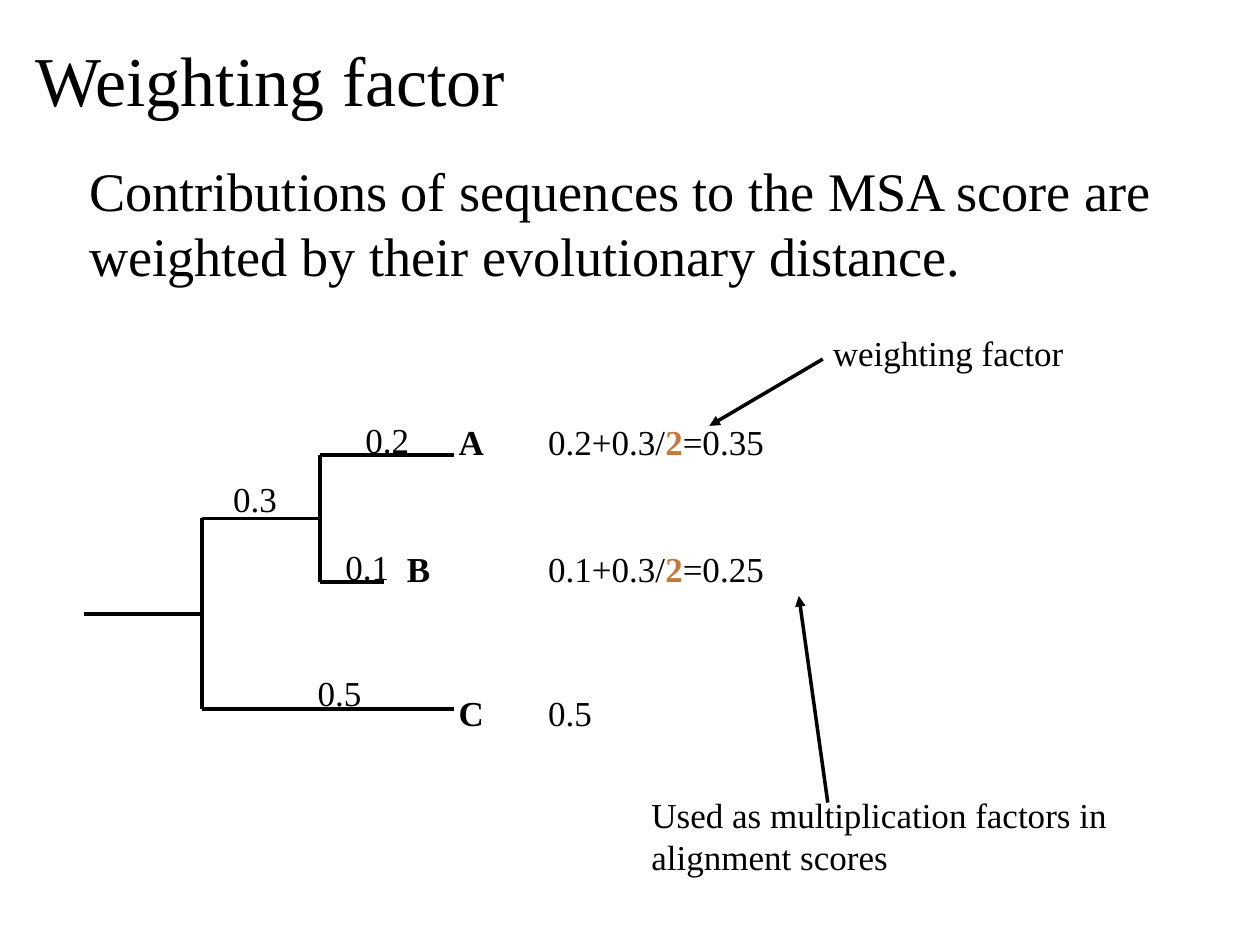
from lxml import etree
from pptx import Presentation
from pptx.dml.color import RGBColor
from pptx.enum import shapes, text
from pptx.oxml import ns
from pptx.util import Inches, Pt

COLORS = {"ink": "000000", "accent": "C67838"}
FONT = "Times New Roman"

# Content: words first, then the tree they belong to
TITLE = "Weighting factor"
STATEMENT = ("Contributions of sequences to the MSA score are "
             "weighted by their evolutionary distance.")
NOTES = [  # words, left, top, width, height
    ("weighting factor", 6.56, 2.58, 2.42, 0.44),
    ("Used as multiplication factors in alignment scores", 5.12, 6.25, 4.03, 0.77),
]
LEAVES = [  # name, left, top, weight formula (*...* is highlighted), formula width
    ("A", 3.59, 3.29, "0.2+0.3/*2*=0.35", 2.4),
    ("B", 3.18, 4.3, "0.1+0.3/*2*=0.25", 2.4),
    ("C", 3.59, 5.44, "0.5", 0.63),
]
LENGTHS = [("0.2", 2.85, 3.27), ("0.1", 2.69, 4.28),
           ("0.5", 2.47, 5.28), ("0.3", 1.8, 3.74)]
ARROWS = [((6.53, 2.85), (5.63, 3.38)), ((6.57, 6.37), (6.34, 4.73))]

# Tree levels
ROOT_X, OUTER_X, INNER_X, TIP_X, B_TIP_X = 0.67, 1.6, 2.54, 3.6, 3.05
A_Y, B_Y, C_Y = 3.61, 4.62, 5.63
INNER_Y = (A_Y + B_Y) / 2
ROOT_Y = (INNER_Y + C_Y) / 2
BRANCHES = [
    ((ROOT_X, ROOT_Y), (OUTER_X, ROOT_Y)),
    ((OUTER_X, INNER_Y), (OUTER_X, C_Y)),
    ((OUTER_X, INNER_Y), (INNER_X, INNER_Y)),
    ((OUTER_X, C_Y), (TIP_X, C_Y)),
    ((INNER_X, A_Y), (TIP_X, A_Y)),
    ((INNER_X, B_Y), (B_TIP_X, B_Y)),
    ((INNER_X, A_Y), (INNER_X, B_Y)),
]
ROW_HEIGHT = 0.44
FORMULA_X = 4.3


def add_text(page, words, left, top, width, height=ROW_HEIGHT, *,
             size=20, bold=False, inset=0.05, wrap=True):
    box = page.shapes.add_textbox(*map(Inches, (left, top, width, height)))
    frame = box.text_frame
    frame.word_wrap = wrap
    frame.auto_size = text.MSO_AUTO_SIZE.SHAPE_TO_FIT_TEXT
    frame.margin_left = frame.margin_right = Inches(inset)
    frame.margin_top = frame.margin_bottom = Inches(inset)
    para = frame.paragraphs[0]
    for index, part in enumerate(words.split("*")):
        marked = index % 2 == 1
        span = para.add_run()
        span.text = part
        span.font.name = FONT
        span.font.size = Pt(size)
        span.font.bold = bold or marked
        color = COLORS["accent" if marked else "ink"]
        span.font.color.rgb = RGBColor.from_string(color)


def add_line(page, start, end, width=2.25, arrow=False):
    line = page.shapes.add_connector(
        shapes.MSO_CONNECTOR.STRAIGHT, *map(Inches, start + end))
    line.line.color.rgb = RGBColor.from_string(COLORS["ink"])
    line.line.width = Pt(width)
    properties = line._element.spPr
    etree.SubElement(properties, ns.qn("a:effectLst"))
    if arrow:
        outline = properties.find(ns.qn("a:ln"))
        etree.SubElement(outline, ns.qn("a:tailEnd"), type="triangle")


def main():
    deck = Presentation()
    deck.slide_width, deck.slide_height = Inches(10), Inches(7.5)
    page = deck.slides.add_slide(deck.slide_layouts[6])

    # Heading and statement
    add_text(page, TITLE, 0.23, 0.24, 3.87, 0.77, size=40, wrap=False)
    add_text(page, STATEMENT, 0.68, 1.22, 8.59, 1.11, size=31, inset=0.03)

    # Tree with branch lengths
    for start, end in BRANCHES:
        add_line(page, start, end)
    for length, left, top in LENGTHS:
        add_text(page, length, left, top, 0.49)

    # Leaves and their weights
    for name, left, top, formula, width in LEAVES:
        add_text(page, name, left, top, 0.54, bold=True)
        add_text(page, formula, FORMULA_X, top, width)

    # Notes and arrows
    for note in NOTES:
        add_text(page, *note)
    for start, end in ARROWS:
        add_line(page, start, end, width=2, arrow=True)

    deck.save("out.pptx")


if __name__ == "__main__":
    main()
